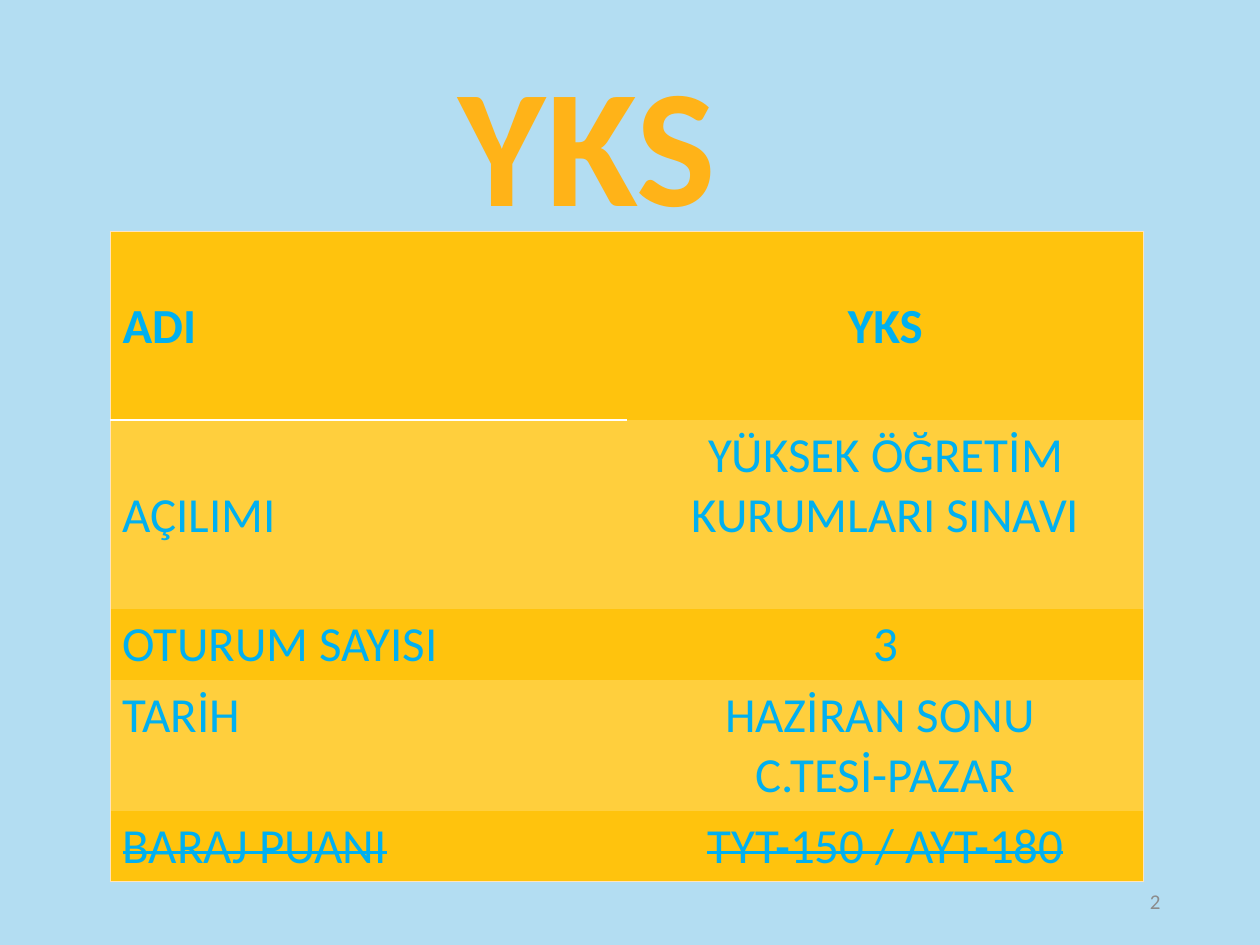
from lxml import etree
from pptx import Presentation
from pptx import util as u
from pptx.dml import color
from pptx.enum import text
from pptx.oxml import ns

PX = 914400 // 126
COLORS = {"sky": "B3DDF2", "title": "FFB318", "gold": "FFC30D", "light": "FFCF3D",
          "ink": "00B0F0", "number": "8C8C8C", "edge": "FFE4BD", "rule": "FFFFFF"}
LEFT, CENTER, RIGHT = text.PP_ALIGN.LEFT, text.PP_ALIGN.CENTER, text.PP_ALIGN.RIGHT


def write(frame, words, size=28, fill="ink", align=LEFT, bold=False, strike=False):
    frame.word_wrap = True
    for index, line in enumerate(words.split("\n")):
        para = frame.paragraphs[0] if index == 0 else frame.add_paragraph()
        para.alignment = align
        span = para.add_run()
        span.text = line
        span.font.name = "Calibri"
        span.font.size = u.Pt(size)
        span.font.bold = bold
        span.font.color.rgb = color.RGBColor.from_string(COLORS[fill])
        if strike:
            span._r.get_or_add_rPr().set("strike", "sngStrike")


def add_border(cell, side, shade, points):
    line = etree.SubElement(cell._tc.get_or_add_tcPr(), ns.qn(f"a:ln{side}"), w=str(u.Pt(points)))
    solid = etree.SubElement(line, ns.qn("a:solidFill"))
    etree.SubElement(solid, ns.qn("a:srgbClr"), val=COLORS[shade])


deck = Presentation()
deck.slide_width, deck.slide_height = u.Inches(10), u.Inches(7.5)
page = deck.slides.add_slide(deck.slide_layouts[6])
page.background.fill.solid()
page.background.fill.fore_color.rgb = color.RGBColor.from_string(COLORS["sky"])

# Title
box = page.shapes.add_textbox(324 * PX, 32 * PX, 527 * PX, 217 * PX)
write(box.text_frame, "YKS", size=96, fill="title", align=CENTER, bold=True)

# Exam facts: left text, right text, row height, top margins of both cells
rows = [
    ("ADI", "YKS", 189, 66, 66),
    ("AÇILIMI", "YÜKSEK ÖĞRETİM KURUMLARI SINAVI", 189, 66, 6),
    ("OTURUM SAYISI", "3", 71, 6, 6),
    ("TARİH", "HAZİRAN SONU \nC.TESİ-PAZAR", 131, 6, 6),
    ("BARAJ PUANI", "TYT-150 / AYT-180", 71, 6, 6),
]
last = len(rows) - 1
table = page.shapes.add_table(len(rows), 2, 110 * PX, 231 * PX, 1034 * PX, 651 * PX).table
# Plain table style without grid lines
table._tbl.tblPr.find(ns.qn("a:tableStyleId")).text = "{2D5ABB26-0587-4C30-8999-92F81FD0307C}"
for column in table.columns:
    column.width = 517 * PX

for r, (label, value, height, *margins) in enumerate(rows):
    table.rows[r].height = height * PX
    for c, words in enumerate((label, value)):
        cell = table.cell(r, c)
        cell.margin_top = margins[c] * PX
        cell.margin_bottom = 5 * PX
        write(cell.text_frame, words, align=(LEFT, CENTER)[c], bold=r == 0, strike=r == last)
        # Outer frame, and a rule under the first heading
        add_border(cell, "LR"[c], "edge", 0.5)
        if r == 0:
            add_border(cell, "T", "edge", 0.5)
        if r == last:
            add_border(cell, "B", "edge", 0.5)
        if r == 0 and c == 0:
            add_border(cell, "B", "rule", 1.5)
        cell.fill.solid()
        shade = COLORS[("gold", "light")[r % 2]]
        cell.fill.fore_color.rgb = color.RGBColor.from_string(shade)

# Page number
box = page.shapes.add_textbox(890 * PX, 876 * PX, 283 * PX, 50 * PX)
box.text_frame.vertical_anchor = text.MSO_ANCHOR.MIDDLE
write(box.text_frame, "2", size=12, fill="number", align=RIGHT)

deck.save("out.pptx")
